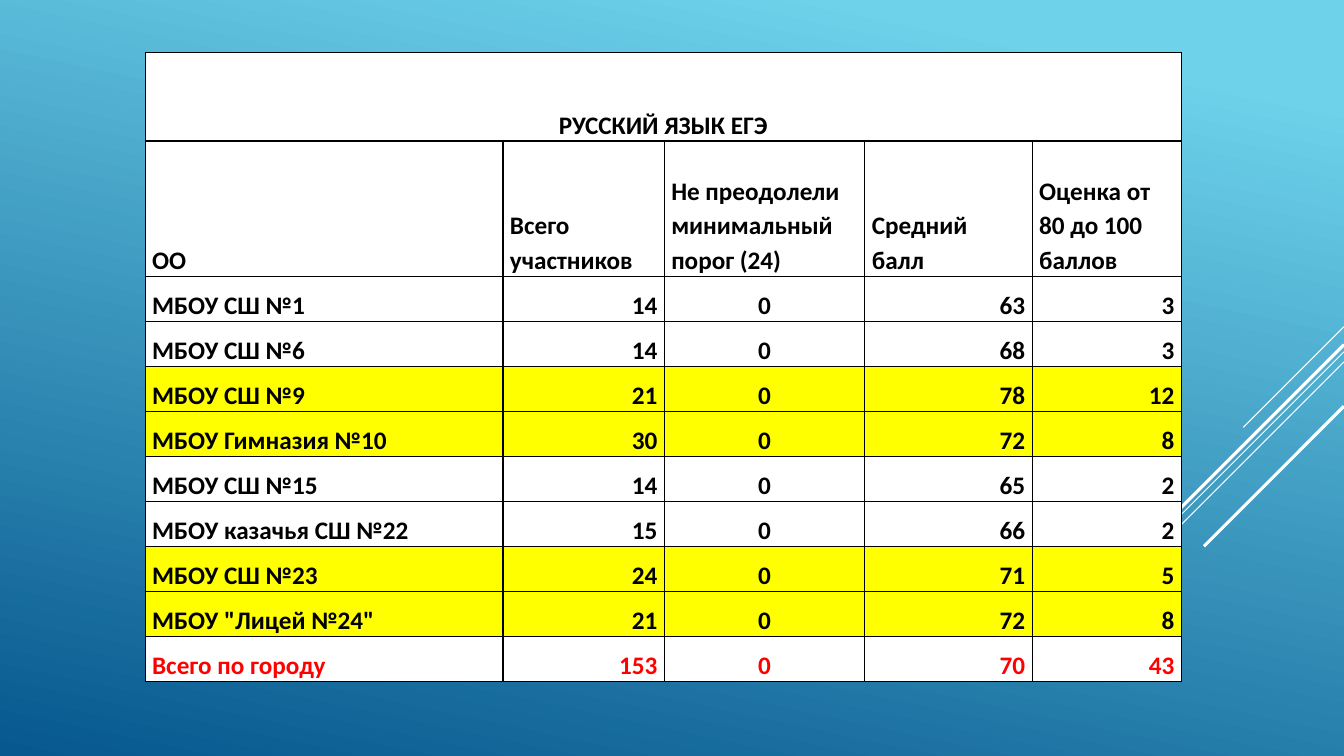
"""Builds a slide with a table of Russian language exam results by school."""
import pptx
import pptx.dml.color
import pptx.enum.shapes
import pptx.enum.text
import pptx.oxml
import pptx.oxml.ns
import pptx.util

Pt = pptx.util.Pt
ALIGN = pptx.enum.text.PP_ALIGN

TITLE = "РУССКИЙ ЯЗЫК ЕГЭ"
HEADINGS = ["ОО", "Всего участников", "Не преодолели минимальный порог (24)",
            "Средний балл", "Оценка от 80 до 100 баллов"]
SCHOOLS = [
    ("МБОУ СШ №1", 14, 0, 63, 3),
    ("МБОУ СШ №6", 14, 0, 68, 3),
    ("МБОУ СШ №9", 21, 0, 78, 12),
    ("МБОУ Гимназия №10", 30, 0, 72, 8),
    ("МБОУ СШ №15", 14, 0, 65, 2),
    ("МБОУ казачья СШ №22", 15, 0, 66, 2),
    ("МБОУ СШ №23", 24, 0, 71, 5),
    ('МБОУ "Лицей №24"', 21, 0, 72, 8),
]
TOTAL = ("Всего по городу", 153, 0, 70, 43)

COLORS = {"sky": "6ED2EB", "deep": "06588E", "white": "FFFFFF",
          "black": "000000", "highlight": "FFFF00", "total": "FF0000"}
SLIDE_WIDTH, SLIDE_HEIGHT = 960, 540
TABLE_LEFT, TABLE_TOP = 103.7, 37.4
COLUMN_WIDTHS = [255.6, 115.2, 143.3, 119.5, 106.6]
TITLE_HEIGHT, HEADING_HEIGHT, ROW_HEIGHT = 63.4, 96.5, 32.15
COLUMN_ALIGNS = [ALIGN.LEFT, ALIGN.RIGHT, ALIGN.CENTER, ALIGN.RIGHT, ALIGN.RIGHT]
DIAGONALS = [(233.3, 72, 0.75), (251.3, 234.7, 0.75), (258.5, 149, 0.75),
             (246.2, 137.5, 2.25), (290.2, 100, 2.25)]


def rgb(name):
    """Return the named colour."""
    return pptx.dml.color.RGBColor.from_string(COLORS[name])


def paint_background(slide):
    """Fill the background with a slanted gradient."""
    fill = slide.background.fill
    fill.gradient()
    fill.gradient_angle = 258
    for stop, position, name in zip(fill.gradient_stops, (0.1, 1), ("sky", "deep")):
        stop.position = position
        stop.color.rgb = rgb(name)


def add_diagonal(slide, top, run, weight):
    """Draw a 45 degree line down from the right edge."""
    line = slide.shapes.add_connector(
        pptx.enum.shapes.MSO_CONNECTOR.STRAIGHT,
        Pt(SLIDE_WIDTH), Pt(top), Pt(SLIDE_WIDTH - run), Pt(top + run))
    line.line.color.rgb = rgb("white")
    line.line.width = Pt(weight)
    properties = line._element.spPr
    properties.append(pptx.oxml.parse_xml(f'<a:effectLst {pptx.oxml.ns.nsdecls("a")}/>'))


def add_borders(cell):
    """Give the cell a thin border on all four sides."""
    properties = cell._tc.get_or_add_tcPr()
    for side in ("lnL", "lnR", "lnT", "lnB"):
        properties.append(pptx.oxml.parse_xml(
            f'<a:{side} {pptx.oxml.ns.nsdecls("a")} w="{Pt(1)}"><a:solidFill>'
            f'<a:srgbClr val="{COLORS["black"]}"/></a:solidFill></a:{side}>'))


def format_cell(cell, text, align, fill, color):
    """Write and style one table cell."""
    add_borders(cell)
    cell.fill.solid()
    cell.fill.fore_color.rgb = rgb(fill)
    cell.vertical_anchor = pptx.enum.text.MSO_ANCHOR.BOTTOM
    cell.margin_left = cell.margin_right = Pt(5)
    cell.margin_top = cell.margin_bottom = 0
    para = cell.text_frame.paragraphs[0]
    para.text = text
    para.alignment = align
    para.line_spacing = 1.12
    for span in para.runs:
        span.font.name = "Calibri"
        span.font.size = Pt(18)
        span.font.bold = True
        span.font.color.rgb = rgb(color)


def add_results(slide):
    """Add the table and fill it row by row."""
    count = len(HEADINGS)
    left_aligns = [ALIGN.LEFT] * count
    rows = [([TITLE] + [""] * (count - 1), [ALIGN.CENTER] * count, "white", "black"),
            (HEADINGS, left_aligns, "white", "black")]
    for school in SCHOOLS:
        fill = "highlight" if school[3] > TOTAL[3] else "white"
        rows.append((school, COLUMN_ALIGNS, fill, "black"))
    rows.append((TOTAL, COLUMN_ALIGNS, "white", "total"))
    heights = [TITLE_HEIGHT, HEADING_HEIGHT] + [ROW_HEIGHT] * (len(rows) - 2)

    table = slide.shapes.add_table(
        len(rows), count, Pt(TABLE_LEFT), Pt(TABLE_TOP),
        Pt(sum(COLUMN_WIDTHS)), Pt(sum(heights))).table
    table.first_row = table.horz_banding = False
    for column, width in zip(table.columns, COLUMN_WIDTHS):
        column.width = Pt(width)
    for row, height, (values, aligns, fill, color) in zip(table.rows, heights, rows):
        row.height = Pt(height)
        for cell, value, align in zip(row.cells, values, aligns):
            format_cell(cell, str(value), align, fill, color)
    table.cell(0, 0).merge(table.cell(0, count - 1))


def main():
    """Build and save the deck."""
    deck = pptx.Presentation()
    deck.slide_width, deck.slide_height = Pt(SLIDE_WIDTH), Pt(SLIDE_HEIGHT)
    slide = deck.slides.add_slide(deck.slide_layouts.get_by_name("Blank"))
    paint_background(slide)
    for diagonal in DIAGONALS:
        add_diagonal(slide, *diagonal)
    add_results(slide)
    deck.save("out.pptx")


if __name__ == "__main__":
    main()
